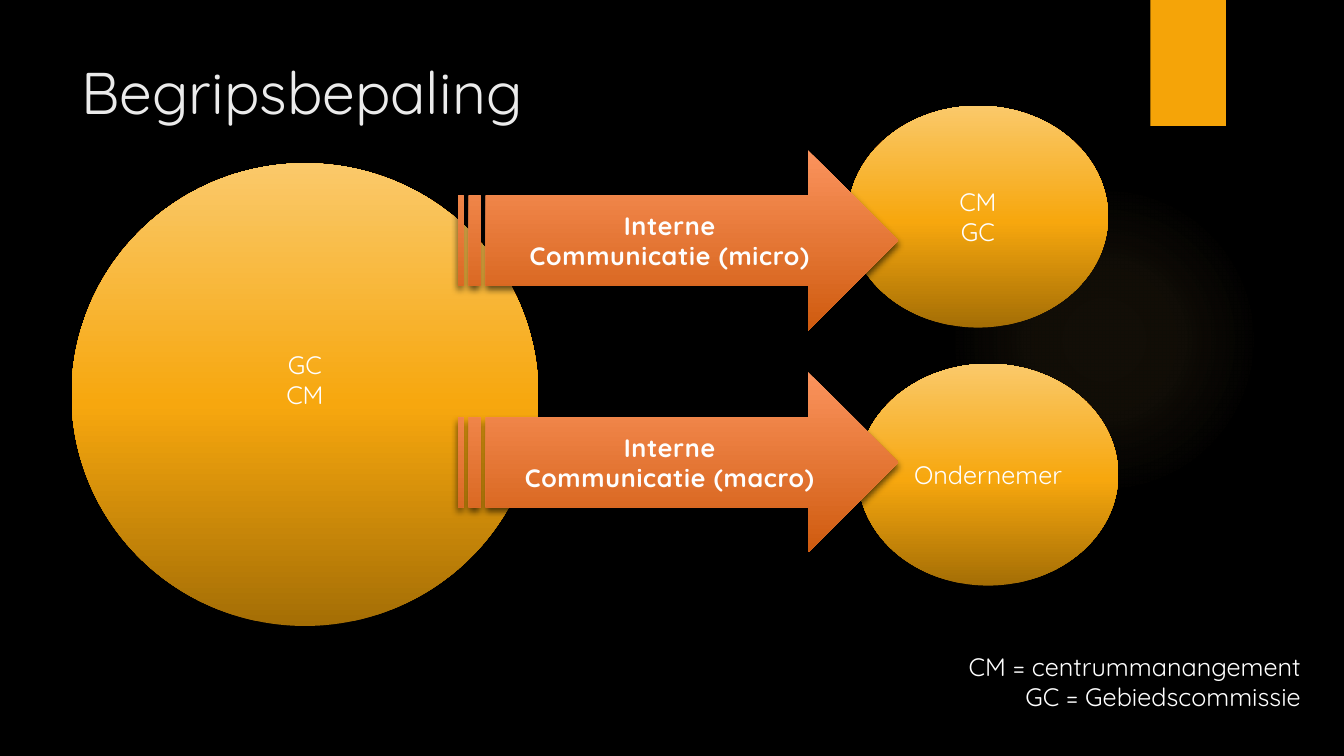
from dataclasses import dataclass
from typing import Optional

from lxml.etree import SubElement
from pptx import Presentation
from pptx.dml.color import RGBColor
from pptx.enum.shapes import MSO_SHAPE as Shape
from pptx.enum.text import MSO_ANCHOR as Anchor, MSO_AUTO_SIZE as AutoSize, PP_ALIGN as Align
from pptx.oxml.ns import qn
from pptx.util import Inches, Pt

FONT = "Quicksand"
WHITE = "FFFFFF"
AMBER = "F5A408"


@dataclass
class Stop:
    position: int
    color: str
    opacity: int = 100


@dataclass
class Gradient:
    stops: list[Stop]
    angle: Optional[int] = None


@dataclass
class Shadow:
    opacity: int
    blur: int
    distance: int


@dataclass
class Party:
    left: float
    top: float
    width: float
    height: float
    text: str
    bottom_inset: float = 0.05


@dataclass
class Flow:
    top: float
    text: str


PARTY_FILL = Gradient([Stop(0, "A46E05"), Stop(48, "F7A70E"), Stop(100, "FAC96A")], 270)
FLOW_FILL = Gradient([Stop(0, "FB935D"), Stop(100, "CF5B0F")], 90)
GLOW_FILL = Gradient([Stop(0, "FAC96A", 7), Stop(36, "FAC96A", 6), Stop(69, "FAC96A", 0)])

ADVISORS = Party(8.41, 1.05, 2.58, 2.2, "CM\nGC")
COMMITTEE = Party(0.71, 1.62, 4.63, 4.59, "GC\nCM", 0.35)
ENTREPRENEUR = Party(8.51, 3.61, 2.58, 2.2, "Ondernemer")
MICRO = Flow(1.49, "Interne\nCommunicatie (micro)")
MACRO = Flow(3.69, "Interne\nCommunicatie (macro)")


def rgb(color: str) -> RGBColor:
    return RGBColor.from_string(color)


def add_color(parent, color: str, opacity: int = 100) -> None:
    node = SubElement(parent, qn("a:srgbClr"), val=color)
    if opacity < 100:
        SubElement(node, qn("a:alpha"), val=str(opacity * 1000))


def apply_gradient(shape, gradient: Gradient) -> None:
    shape.fill.background()
    properties = shape.fill._xPr
    fill = SubElement(properties, qn("a:gradFill"), rotWithShape="1")
    stops = SubElement(fill, qn("a:gsLst"))
    for stop in gradient.stops:
        node = SubElement(stops, qn("a:gs"), pos=str(stop.position * 1000))
        add_color(node, stop.color, stop.opacity)
    if gradient.angle is None:
        center = SubElement(fill, qn("a:path"), path="circle")
        SubElement(center, qn("a:fillToRect"), {side: "50000" for side in "ltrb"})
    else:
        SubElement(fill, qn("a:lin"), ang=str(gradient.angle * 60000), scaled="0")
    properties.replace(properties.find(qn("a:noFill")), fill)


def apply_shadow(shape, shadow: Shadow) -> None:
    effects = shape._element.spPr.find(qn("a:effectLst"))
    node = SubElement(effects, qn("a:outerShdw"), blurRad=str(Pt(shadow.blur)),
                      dist=str(Pt(shadow.distance)), dir="5400000", rotWithShape="0")
    add_color(node, "000000", shadow.opacity)


def add_plain(slide, kind: Shape, left: float, top: float, width: float, height: float):
    shape = slide.shapes.add_shape(kind, Inches(left), Inches(top), Inches(width), Inches(height))
    shape.shadow.inherit = False
    shape.line.fill.background()
    return shape


def write(frame, text: str, align: Align, color: str = WHITE,
          size: int = 18, bold: bool = False) -> None:
    frame.text = text
    for paragraph in frame.paragraphs:
        paragraph.alignment = align
        for run in paragraph.runs:
            run.font.name = FONT
            run.font.size = Pt(size)
            run.font.bold = bold
            run.font.color.rgb = rgb(color)


def outline_text(frame) -> None:
    for paragraph in frame.paragraphs:
        for run in paragraph.runs:
            properties = run.font._element
            properties.set("spc", "50")
            line = SubElement(properties, qn("a:ln"), w=str(Pt(0.75)))
            add_color(SubElement(line, qn("a:solidFill")), AMBER)
            properties.insert(0, line)


def add_party(slide, party: Party) -> None:
    circle = add_plain(slide, Shape.OVAL, party.left, party.top, party.width, party.height)
    apply_gradient(circle, PARTY_FILL)
    frame = circle.text_frame
    frame.vertical_anchor = Anchor.MIDDLE
    frame.margin_bottom = Inches(party.bottom_inset)
    write(frame, party.text, Align.CENTER)


def add_flow(slide, flow: Flow) -> None:
    arrow = add_plain(slide, Shape.STRIPED_RIGHT_ARROW, 4.54, flow.top, 4.37, 1.79)
    apply_gradient(arrow, FLOW_FILL)
    apply_shadow(arrow, Shadow(60, 5, 3))
    arrow.text_frame.vertical_anchor = Anchor.MIDDLE
    write(arrow.text_frame, flow.text, Align.CENTER, "FEFEFE", bold=True)
    outline_text(arrow.text_frame)


def add_backdrop(slide) -> None:
    slide.background.fill.solid()
    slide.background.fill.fore_color.rgb = rgb("000000")
    glow = add_plain(slide, Shape.OVAL, 9.41, 1.83, 3.08, 3.08)
    apply_gradient(glow, GLOW_FILL)
    ribbon = add_plain(slide, Shape.RECTANGLE, 11.41, 0, 0.75, 1.25)
    ribbon.fill.solid()
    ribbon.fill.fore_color.rgb = rgb(AMBER)
    apply_shadow(ribbon, Shadow(45, 3, 2))


def add_title(slide) -> None:
    title = slide.shapes.title
    title.left, title.top = Inches(0.71), Inches(0.5)
    title.width, title.height = Inches(10.29), Inches(1.53)
    title.text_frame.vertical_anchor = Anchor.TOP
    write(title.text_frame, "Begripsbepaling", Align.LEFT, "EBEBEB", 42)


def add_legend(slide) -> None:
    legend = slide.shapes.add_textbox(Inches(9.17), Inches(6.41), Inches(3.83), Inches(0.71))
    legend.text_frame.word_wrap = False
    legend.text_frame.auto_size = AutoSize.SHAPE_TO_FIT_TEXT
    write(legend.text_frame, "CM = centrummanangement\nGC = Gebiedscommissie", Align.RIGHT)


def main() -> None:
    deck = Presentation()
    deck.slide_width, deck.slide_height = Inches(13.33), Inches(7.5)
    slide = deck.slides.add_slide(deck.slide_layouts.get_by_name("Title Only"))
    add_backdrop(slide)
    add_title(slide)
    add_party(slide, ADVISORS)
    add_party(slide, COMMITTEE)
    add_flow(slide, MICRO)
    add_legend(slide)
    add_party(slide, ENTREPRENEUR)
    add_flow(slide, MACRO)
    deck.save("out.pptx")


if __name__ == "__main__":
    main()
